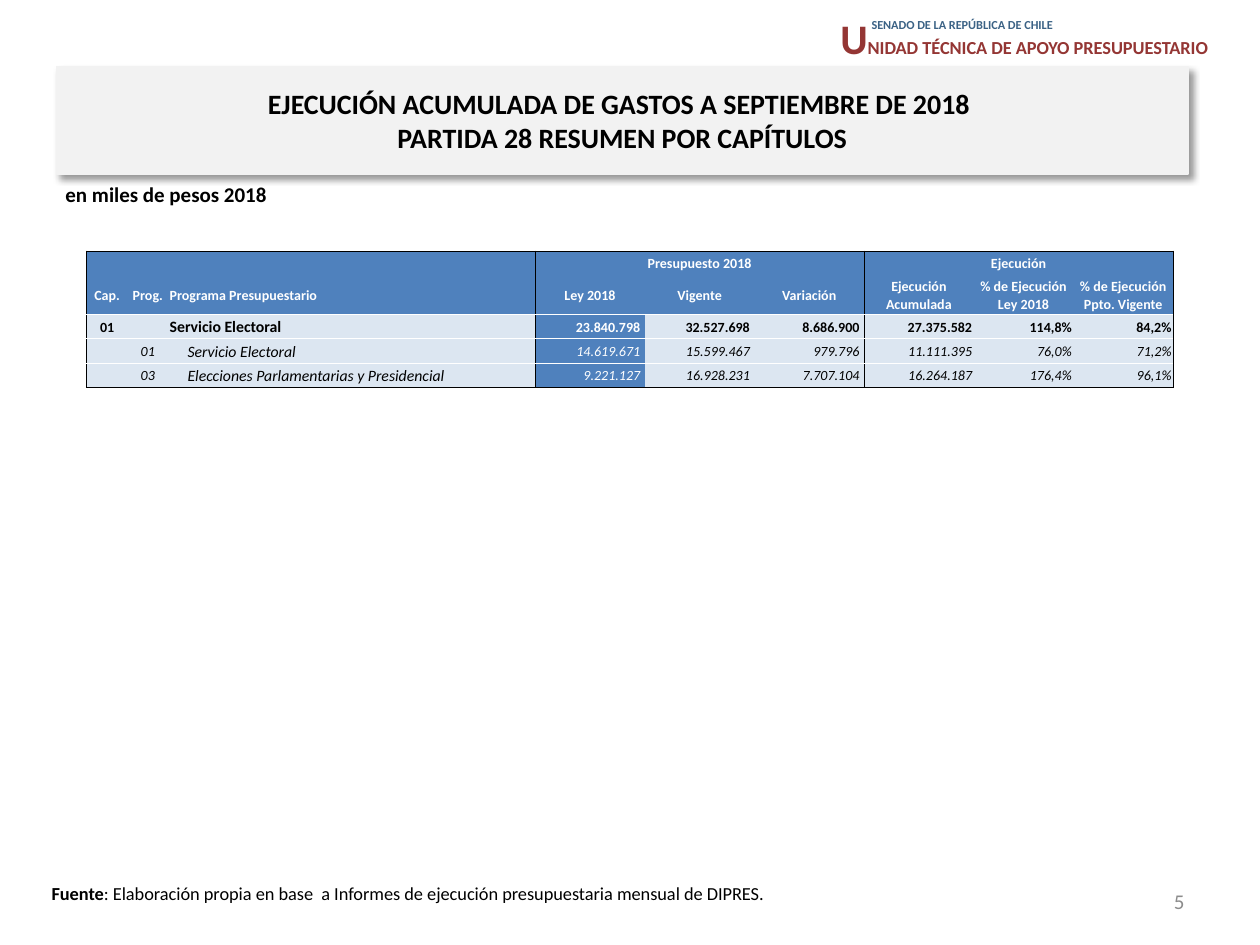
from lxml import etree
from pptx import Presentation
from pptx.dml.color import RGBColor
from pptx.enum import text
from pptx.oxml import parse_xml
from pptx.oxml.ns import nsdecls, qn
from pptx.util import Cm, Pt

BLACK, WHITE, BLUE, PALE, RED = "000000", "FFFFFF", "4F81BD", "DCE6F1", "943634"
AL, MIDDLE = text.PP_ALIGN, text.MSO_ANCHOR.MIDDLE


def color(hex_value):
    return RGBColor.from_string(hex_value)


def add_run(p, words, size, hex_value, bold=False, italic=False):
    r = p.add_run()
    r.text = words
    r.font.name, r.font.size = "Calibri", Pt(size)
    r.font.bold, r.font.italic = bold, italic
    r.font.color.rgb = color(hex_value)


prs = Presentation()
prs.slide_width, prs.slide_height = Cm(25.4), Cm(19.05)
s = prs.slides.add_slide(prs.slide_layouts[5])

boxes = [
    (17.09, 0.23, 6.07, 0.46, 0.48, AL.LEFT,
     [("SENADO DE LA REPÚBLICA DE CHILE", 7, "3B6285", True)]),
    (16.69, 0.13, 8.41, 1.27, 0.25, AL.LEFT,
     [("U", 24, RED, True),
      ("NIDAD TÉCNICA DE APOYO PRESUPUESTARIO", 10.5, RED, True)]),
    (0.79, 17.65, 23.34, 1.02, 0.25, AL.LEFT,
     [("Fuente", 10.5, BLACK, True),
      (": Elaboración propia en base  a Informes de ejecución presupuestaria mensual de DIPRES.",
       10.5, BLACK, False)]),
    (18.21, 17.65, 5.92, 1.02, 0.25, AL.RIGHT, [("5", 12, "8C8C8C", False)]),
    (1.07, 3.53, 22.86, 1.27, 0.25, AL.LEFT,
     [("en miles de pesos 2018", 12, BLACK, True)]),
]
for x, y, w, h, inset, align, runs in boxes:
    sp = s.shapes.add_textbox(Cm(x), Cm(y), Cm(w), Cm(h))
    tf = sp.text_frame
    tf.word_wrap = True
    tf.margin_left = Cm(inset)
    p = tf.paragraphs[0]
    p.alignment = align
    if align == AL.RIGHT:
        tf.vertical_anchor = MIDDLE
    for run in runs:
        add_run(p, *run)

title = s.shapes.title
title.left, title.top, title.width, title.height = Cm(1.14), Cm(1.35), Cm(22.81), Cm(2.16)
title.fill.solid()
title.fill.fore_color.rgb = color("F2F2F2")
title.line.color.rgb = color("F2F2F2")
title.line.width = Pt(0.75)
title._element.spPr.append(parse_xml(
    f'<a:effectLst {nsdecls("a")}><a:outerShdw blurRad="50800" dist="38100" dir="2700000" '
    'algn="tl" rotWithShape="0"><a:srgbClr val="000000"><a:alpha val="40000"/></a:srgbClr>'
    '</a:outerShdw></a:effectLst>'))
tf = title.text_frame
tf.auto_size = text.MSO_AUTO_SIZE.NONE
tf.vertical_anchor = MIDDLE
tf.margin_left = tf.margin_right = Cm(0.28)
p = tf.paragraphs[0]
p.alignment = AL.CENTER
add_run(p, "EJECUCIÓN ACUMULADA DE GASTOS A SEPTIEMBRE DE 2018 ", 16, BLACK, True)
p.add_line_break()
add_run(p, "PARTIDA 28 RESUMEN POR CAPÍTULOS", 16, BLACK, True)

rows = [
    ["", "", "", "Presupuesto 2018", "", "", "Ejecución", "", ""],
    ["Cap.", "Prog.", "Programa Presupuestario", "Ley 2018", "Vigente", "Variación",
     "Ejecución Acumulada", "% de Ejecución Ley 2018", "% de Ejecución Ppto. Vigente"],
    ["01", "", "Servicio Electoral", "23.840.798", "32.527.698", "8.686.900",
     "27.375.582", "114,8%", "84,2%"],
    ["", "01", "Servicio Electoral", "14.619.671", "15.599.467", "979.796",
     "11.111.395", "76,0%", "71,2%"],
    ["", "03", "Elecciones Parlamentarias y Presidencial", "9.221.127", "16.928.231",
     "7.707.104", "16.264.187", "176,4%", "96,1%"],
]
widths = [0.82, 0.82, 7.4] + [2.21] * 4 + [2.01] * 2
heights = [0.49, 0.79] + [0.49] * 3
table = s.shapes.add_table(len(rows), len(widths), Cm(1.75), Cm(5.06),
                           Cm(sum(widths)), Cm(sum(heights))).table
for col, w in zip(table.columns, widths):
    col.width = Cm(w)
for row, h in zip(table.rows, heights):
    row.height = Cm(h)
for first in (3, 6):
    table.cell(0, first).merge(table.cell(0, first + 2))

last = len(rows) - 1
for i, row in enumerate(rows):
    for j, words in enumerate(row):
        cell = table.cell(i, j)
        header, detail = i < 2, i > 2
        cell.vertical_anchor = MIDDLE
        cell.margin_left = Cm(0.39 if detail and j == 2 else 0.03)
        cell.margin_right = Cm(0.09 if not header and 3 <= j <= 5 else 0.03)
        cell.margin_top, cell.margin_bottom = Cm(0.03), 0
        p = cell.text_frame.paragraphs[0]
        if j == 2:
            p.alignment = AL.LEFT
        else:
            p.alignment = AL.CENTER if header or j < 2 else AL.RIGHT
        if words:
            add_run(p, words, 9 if j == 2 and not header else 8,
                    WHITE if header or j == 3 else BLACK, not detail, detail)
        else:
            etree.SubElement(p._p, qn("a:endParaRPr"), sz="800")

        edges = {
            "L": BLACK if j % 3 == 0 else None,
            "R": BLACK if j % 3 == 2 or (i == 0 and j > 2) else None,
            "T": BLACK if i == 0 else WHITE if i > 1 else None,
            "B": BLACK if i == last else WHITE if i > 0 else None,
        }
        tcPr = cell._tc.get_or_add_tcPr()
        for side, hex_value in edges.items():
            ln = etree.SubElement(tcPr, qn(f"a:ln{side}"), w="6350")
            if hex_value:
                fill = etree.SubElement(ln, qn("a:solidFill"))
                etree.SubElement(fill, qn("a:srgbClr"), val=hex_value)
            else:
                etree.SubElement(ln, qn("a:noFill"))
        cell.fill.solid()
        cell.fill.fore_color.rgb = color(BLUE if header or j == 3 else PALE)

prs.save("out.pptx")
